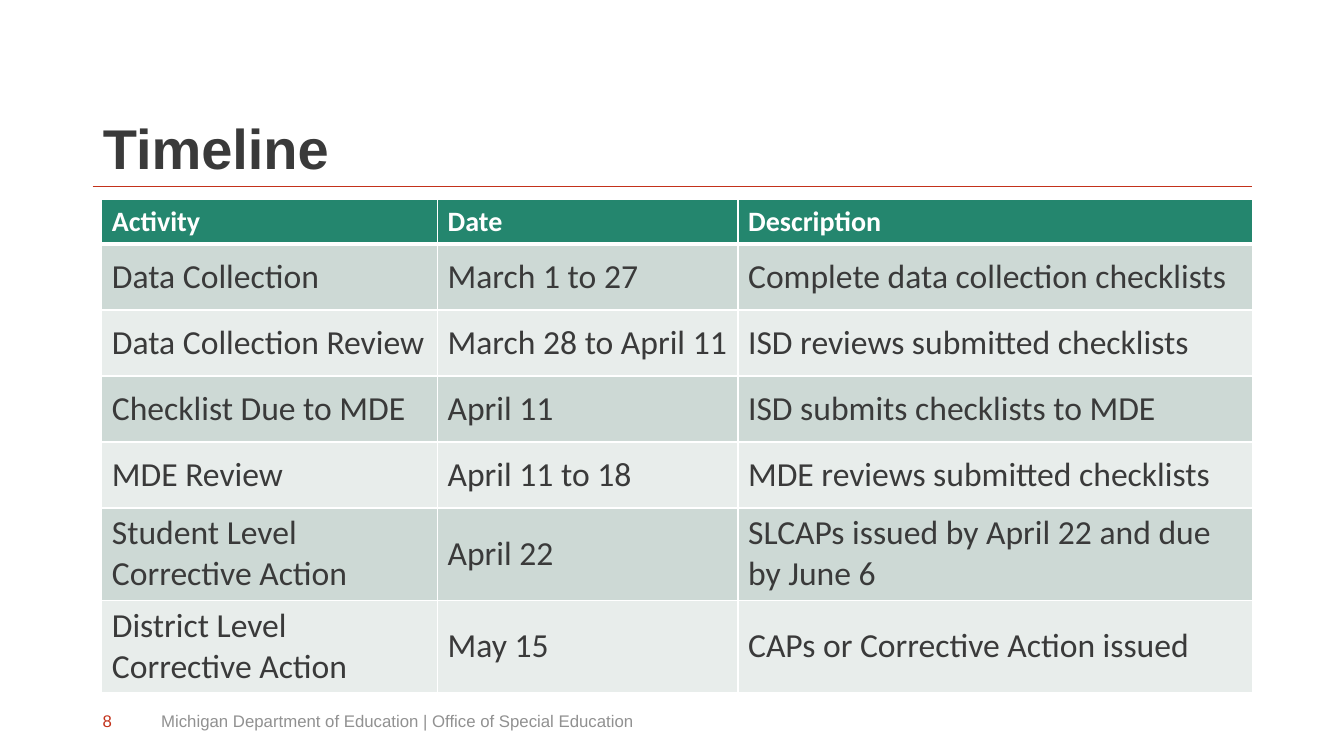
import collections
import pptx
import pptx.dml.color
import pptx.enum.text
import pptx.oxml
import pptx.oxml.ns
import pptx.util
import lxml.etree

Box = collections.namedtuple("Box", "left top width height")

# The page is a grid of 1333 columns by 750 rows.
COLUMNS, ROWS = 1333, 750
CELL = pptx.util.Inches(0.01)

COLORS = {
    "text": "3A3A3A", "red": "C3321B", "gray": "919191", "white": "FFFFFF",
    "header": "24866E", "odd": "CDD9D5", "even": "E8EDEB",
}
TITLE_FONT = {"name": "Arial", "size": pptx.util.Pt(40), "bold": True}
FOOTER_FONT = {"name": "Arial", "size": pptx.util.Pt(12), "bold": False}
HEADER_FONT = {"name": "Calibri", "size": pptx.util.Pt(20), "bold": True}
BODY_FONT = {"name": "Calibri", "size": pptx.util.Pt(24), "bold": False}

TIMELINE = [
    ("Activity", "Date", "Description"),
    ("Data Collection", "March 1 to 27", "Complete data collection checklists"),
    ("Data Collection Review", "March 28 to April 11", "ISD reviews submitted checklists"),
    ("Checklist Due to MDE", "April 11", "ISD submits checklists to MDE"),
    ("MDE Review", "April 11 to 18", "MDE reviews submitted checklists"),
    ("Student Level Corrective Action", "April 22",
     "SLCAPs issued by April 22 and due by June 6"),
    ("District Level Corrective Action", "May 15", "CAPs or Corrective Action issued"),
]
COLUMN_WIDTHS = [333, 298, 510]
HEADER_ROW, SINGLE_ROW, DOUBLE_ROW = 44, 65.5, 91.5
ROW_HEIGHTS = [HEADER_ROW] + [SINGLE_ROW] * 4 + [DOUBLE_ROW] * 2


def grid(count):
    return pptx.util.Emu(round(count * CELL))


def rgb(color):
    return pptx.dml.color.RGBColor.from_string(COLORS[color])


def write(frame, text, font, color):
    para = frame.paragraphs[0]
    para.alignment = pptx.enum.text.PP_ALIGN.LEFT
    span = para.add_run()
    span.text = text
    for name, value in font.items():
        setattr(span.font, name, value)
    span.font.color.rgb = rgb(color)
    return para


def add_title(page, box, text):
    """Fill the title placeholder and rule a line along its lower edge."""
    title = page.shapes.title
    for name, value in box._asdict().items():
        setattr(title, name, grid(value))
    frame = title.text_frame
    frame.auto_size = pptx.enum.text.MSO_AUTO_SIZE.NONE
    frame.vertical_anchor = pptx.enum.text.MSO_ANCHOR.BOTTOM
    write(frame, text, TITLE_FONT, "text").line_spacing = 0.9

    bottom = grid(box.top + box.height)
    rule = page.shapes.add_connector(
        pptx.enum.shapes.MSO_CONNECTOR.STRAIGHT,
        grid(box.left), bottom, grid(box.left + box.width), bottom)
    rule.line.color.rgb = rgb("red")
    rule.line.width = pptx.util.Pt(0.5)
    lxml.etree.SubElement(rule._element.spPr, pptx.oxml.ns.qn("a:effectLst"))


def add_borders(cell, widths):
    properties = cell._tc.get_or_add_tcPr()
    for side, points in widths.items():
        properties.append(pptx.oxml.parse_xml(
            f'<a:ln{side} {pptx.oxml.ns.nsdecls("a")} w="{pptx.util.Pt(points)}">'
            f'<a:solidFill><a:srgbClr val="{COLORS["white"]}"/></a:solidFill>'
            f'</a:ln{side}>'))


def add_timeline(page, box):
    table = page.shapes.add_table(
        len(TIMELINE), len(COLUMN_WIDTHS), *map(grid, box)).table
    for column, width in zip(table.columns, COLUMN_WIDTHS):
        column.width = grid(width)
    for row, height in zip(table.rows, ROW_HEIGHTS):
        row.height = grid(height)
    for index, texts in enumerate(TIMELINE):
        if index == 0:
            fill, font, color = "header", HEADER_FONT, "white"
        else:
            fill, font, color = ("odd" if index % 2 else "even"), BODY_FONT, "text"
        borders = {"L": 1, "R": 1, "T": 3 if index == 1 else 1,
                   "B": 3 if index == 0 else 1}
        for cell, text in zip(table.rows[index].cells, texts):
            add_borders(cell, borders)
            cell.fill.solid()
            cell.fill.fore_color.rgb = rgb(fill)
            cell.vertical_anchor = pptx.enum.text.MSO_ANCHOR.MIDDLE
            write(cell.text_frame, text, font, color)


def add_footer(page, box, number, owner):
    number_width, owner_offset = 45, 58
    parts = [
        (box._replace(width=number_width), number, "red"),
        (box._replace(left=box.left + owner_offset,
                      width=box.width - owner_offset), owner, "gray"),
    ]
    for place, text, color in parts:
        frame = page.shapes.add_textbox(*map(grid, place)).text_frame
        frame.word_wrap = True
        frame.vertical_anchor = pptx.enum.text.MSO_ANCHOR.MIDDLE
        write(frame, text, FOOTER_FONT, color)


def main():
    deck = pptx.Presentation()
    deck.slide_width, deck.slide_height = grid(COLUMNS), grid(ROWS)
    page = deck.slides.add_slide(deck.slide_layouts.get_by_name("Title Only"))
    add_title(page, Box(92, 40, 1150, 145), "Timeline")
    add_timeline(page, Box(101, 198, sum(COLUMN_WIDTHS), sum(ROW_HEIGHTS)))
    add_footer(page, Box(92, 695, 897, 40), "8",
               "Michigan Department of Education | Office of Special Education")
    deck.save("out.pptx")


if __name__ == "__main__":
    main()
